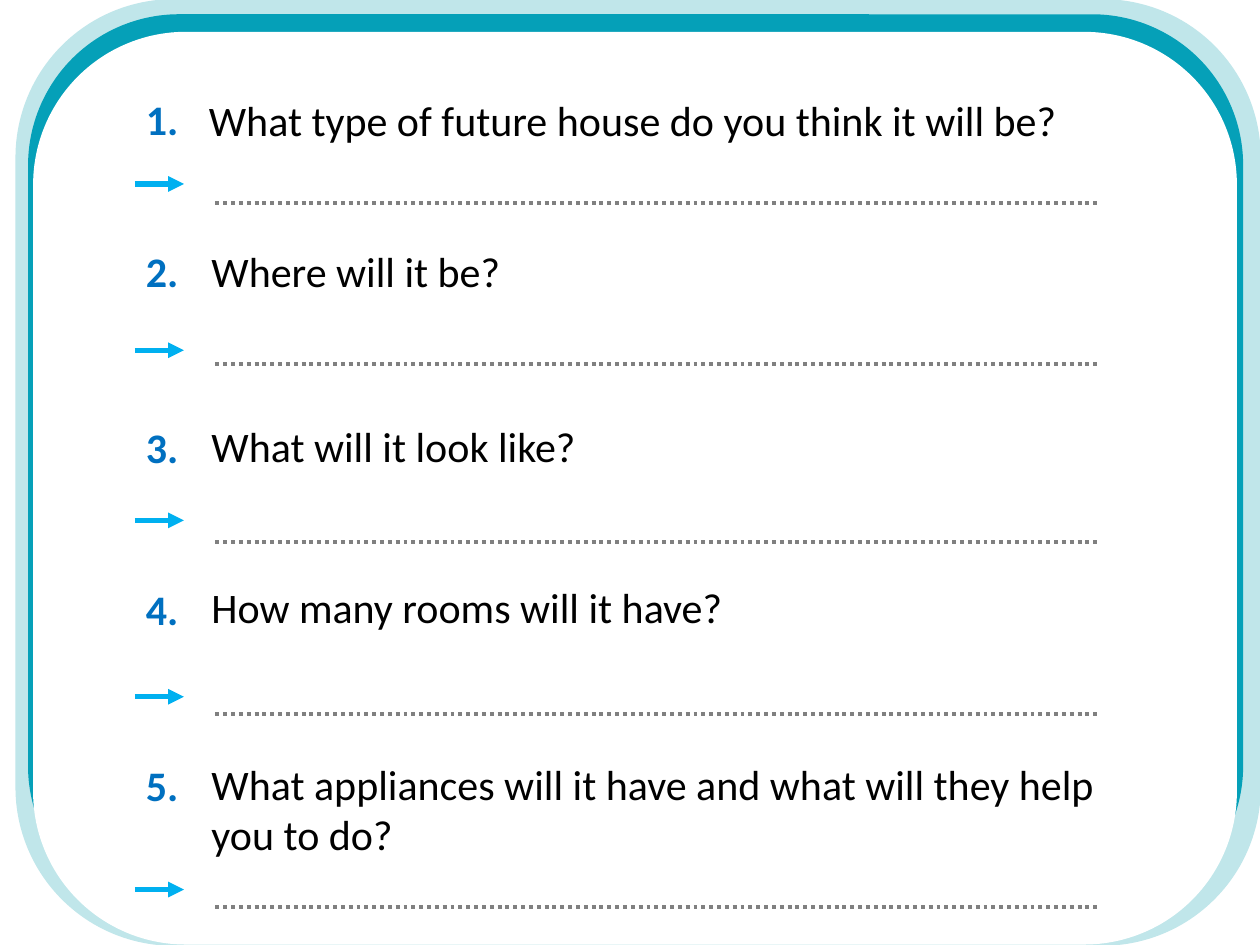
from dataclasses import dataclass

import pptx
import pptx.dml.color
import pptx.enum.dml
import pptx.enum.shapes
import pptx.enum.text
import pptx.oxml.ns
import pptx.slide
import pptx.util
from lxml import etree
from pptx.util import Inches


@dataclass(frozen=True)
class Theme:
    font: str = "Calibri"
    text_size: int = 24
    number: str = "0070C0"
    text: str = "000000"
    answer_line: str = "808080"
    arrow: str = "00B0F0"
    outer_frame: str = "C0E6EA"
    inner_frame: str = "05A0B8"
    paper: str = "FFFFFF"


@dataclass(frozen=True)
class Panel:
    left: float
    top: float
    width: float
    height: float
    color: str


@dataclass(frozen=True)
class Question:
    text: str
    number_top: float
    text_top: float
    arrow_y: float
    answer_y: float
    text_left: float = 1.58
    text_width: float = 6.56
    text_height: float = 0.5


THEME = Theme()

PANELS = [
    Panel(0.13, 0, 9.87, 7.5, THEME.outer_frame),
    Panel(0.23, 0.12, 9.63, 7.15, THEME.inner_frame),
    Panel(0.27, 0.26, 9.54, 7.23, THEME.paper),
]

QUESTIONS = [
    Question("What type of future house do you think it will be?",
             0.69, 0.7, 1.46, 1.61, text_left=1.56, text_width=7.13),
    Question("Where will it be?", 1.9, 1.9, 2.78, 2.89),
    Question("What will it look like?", 3.3, 3.29, 4.13, 4.3),
    Question("How many rooms will it have?", 4.58, 4.57, 5.53, 5.67),
    Question("What appliances will it have and what will they help you to do?",
             5.98, 5.97, 7.06, 7.2, text_width=7.34, text_height=0.91),
]


def rgb(color: str) -> pptx.dml.color.RGBColor:
    return pptx.dml.color.RGBColor.from_string(color)


def add_panel(page: pptx.slide.Slide, panel: Panel) -> None:
    shape = page.shapes.add_shape(
        pptx.enum.shapes.MSO_SHAPE.ROUNDED_RECTANGLE,
        Inches(panel.left), Inches(panel.top),
        Inches(panel.width), Inches(panel.height))
    shape.shadow.inherit = False
    shape.fill.solid()
    shape.fill.fore_color.rgb = rgb(panel.color)
    shape.line.color.rgb = rgb(panel.color)
    shape.line.width = pptx.util.Pt(1)


def add_text(page: pptx.slide.Slide, text: str, left: float, top: float,
             width: float, height: float, color: str, bold: bool = False) -> None:
    box = page.shapes.add_textbox(
        Inches(left), Inches(top), Inches(width), Inches(height))
    frame = box.text_frame
    frame.word_wrap = True
    frame.auto_size = pptx.enum.text.MSO_AUTO_SIZE.SHAPE_TO_FIT_TEXT
    frame.text = text
    span = frame.paragraphs[0].runs[0]
    span.font.name = THEME.font
    span.font.size = pptx.util.Pt(THEME.text_size)
    span.font.bold = bold
    span.font.color.rgb = rgb(color)


def add_line(page: pptx.slide.Slide, left: float, right: float, y: float,
             color: str, width: float, dotted: bool = False,
             arrow: bool = False) -> None:
    line = page.shapes.add_connector(
        pptx.enum.shapes.MSO_CONNECTOR.STRAIGHT,
        Inches(left), Inches(y), Inches(right), Inches(y))
    line.line.color.rgb = rgb(color)
    line.line.width = pptx.util.Pt(width)
    if dotted:
        line.line.dash_style = pptx.enum.dml.MSO_LINE.ROUND_DOT
    properties = line._element.spPr
    if arrow:
        outline = properties.find(pptx.oxml.ns.qn("a:ln"))
        etree.SubElement(outline, pptx.oxml.ns.qn("a:tailEnd"), type="triangle")
    etree.SubElement(properties, pptx.oxml.ns.qn("a:effectLst"))


def add_question(page: pptx.slide.Slide, number: int, question: Question) -> None:
    add_text(page, f"{number}.", 1.06, question.number_top, 0.52, 0.5,
             THEME.number, bold=True)
    add_text(page, question.text, question.text_left, question.text_top,
             question.text_width, question.text_height, THEME.text)
    add_line(page, 1.71, 8.71, question.answer_y, THEME.answer_line, 2.25,
             dotted=True)
    add_line(page, 1.07, 1.46, question.arrow_y, THEME.arrow, 3, arrow=True)


def main() -> None:
    deck = pptx.Presentation()
    deck.slide_width, deck.slide_height = Inches(10), Inches(7.5)
    page = deck.slides.add_slide(deck.slide_layouts.get_by_name("Blank"))

    # Nested rounded frame
    for panel in PANELS:
        add_panel(page, panel)

    # Numbered questions, each with an arrow and a dotted answer line
    for number, question in enumerate(QUESTIONS, start=1):
        add_question(page, number, question)

    deck.save("out.pptx")


if __name__ == "__main__":
    main()
